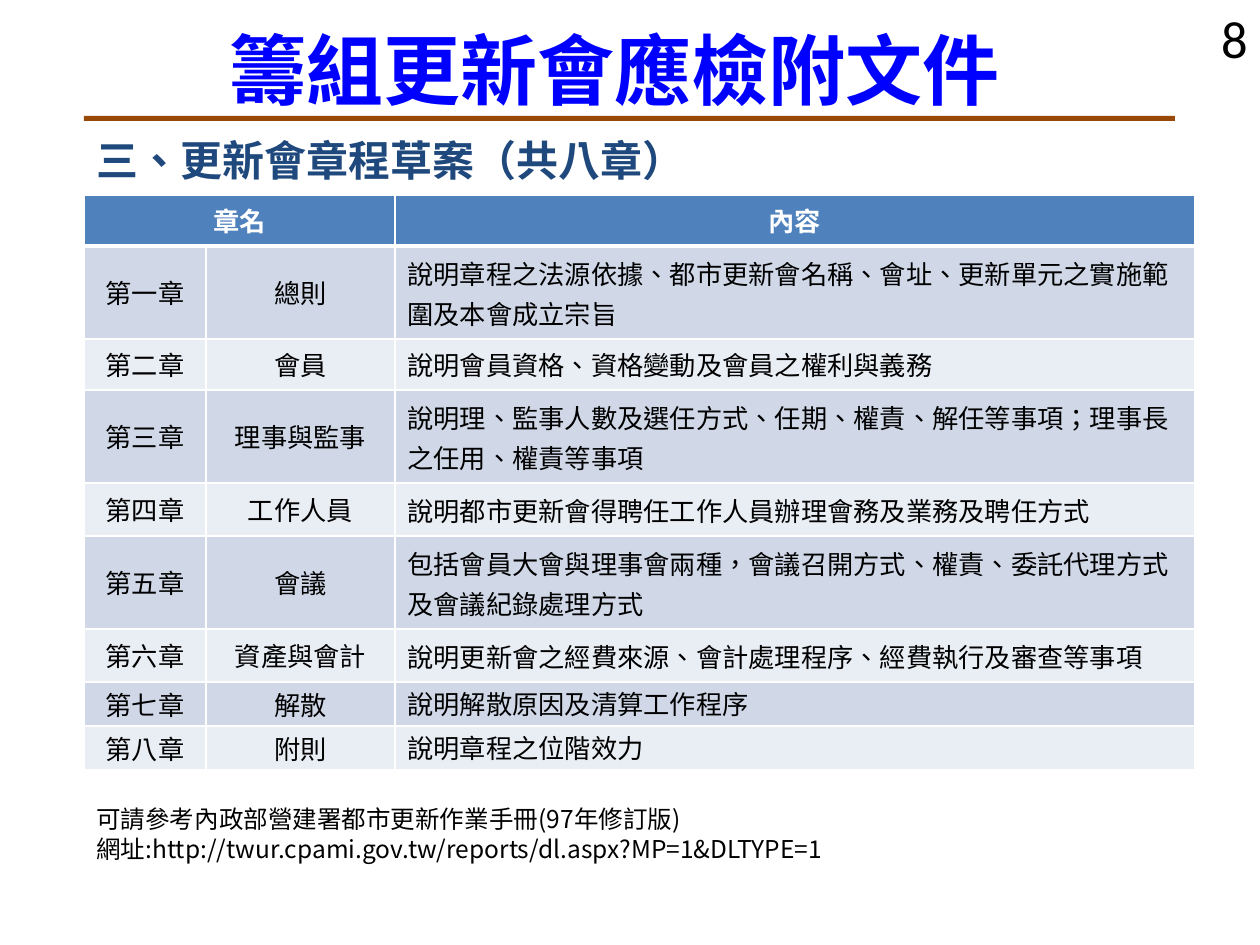
from lxml import etree
from pptx import Presentation
from pptx.dml.color import RGBColor
from pptx.enum.shapes import MSO_SHAPE
from pptx.enum.text import MSO_ANCHOR, PP_ALIGN
from pptx.oxml.ns import qn
from pptx.util import Pt

PX = 914400 // 126
LEFT, CENTER, RIGHT = PP_ALIGN.LEFT, PP_ALIGN.CENTER, PP_ALIGN.RIGHT
TOP, MIDDLE = MSO_ANCHOR.TOP, MSO_ANCHOR.MIDDLE
RECT = MSO_SHAPE.RECTANGLE
CJK = "Noto Sans CJK SC"
COLORS = {
    "title": "0000FF", "rule": "984807", "heading": "1F497D",
    "text": "000000", "white": "FFFFFF",
    "header": "4F81BD", "odd": "D0D8E8", "even": "E9EDF4",
}
COL_WIDTHS = [122, 189, 800]
HEADER_HEIGHT = 51
# chapter, name, content, row height, exact line spacing in points
CHAPTERS = [
    ("第一章", "總則", "說明章程之法源依據、都市更新會名稱、會址、更新單元之實施範圍及本會成立宗旨", 93, 23),
    ("第二章", "會員", "說明會員資格、資格變動及會員之權利與義務", 51, None),
    ("第三章", "理事與監事", "說明理、監事人數及選任方式、任期、權責、解任等事項；理事長之任用、權責等事項", 93, 23),
    ("第四章", "工作人員", "說明都市更新會得聘任工作人員辦理會務及業務及聘任方式", 53, 23),
    ("第五章", "會議", "包括會員大會與理事會兩種，會議召開方式、權責、委託代理方式及會議紀錄處理方式", 93, 23),
    ("第六章", "資產與會計", "說明更新會之經費來源、會計處理程序、經費執行及審查等事項", 53, 23),
    ("第七章", "解散", "說明解散原因及清算工作程序", 44, None),
    ("第八章", "附則", "說明章程之位階效力", 44, None),
]


def rgb(name):
    return RGBColor.from_string(COLORS[name])


def px(*values):
    return [v * PX for v in values]


def write(tf, text, size=15, color="text", bold=False, align=LEFT, font=CJK, spacing=None):
    """Fill a text frame, one paragraph per line; spacing is in points."""
    for i, line in enumerate(text.split("\n")):
        p = tf.paragraphs[0] if i == 0 else tf.add_paragraph()
        p.alignment = align
        if spacing:
            p.line_spacing = Pt(spacing)
        r = p.add_run()
        r.text = line
        r.font.size, r.font.bold, r.font.name = Pt(size), bold, font
        r.font.color.rgb = rgb(color)
        rPr = r.font._element
        rPr.set("lang", "zh-TW")
        ea = etree.Element(qn("a:ea"), typeface=font)
        rPr.find(qn("a:latin")).addnext(ea)


def add_text(s, box, text, **fmt):
    tf = s.shapes.add_textbox(*px(*box)).text_frame
    tf.word_wrap = True
    write(tf, text, **fmt)


def add_title(s, box, text):
    title = s.shapes.title
    title.left, title.top, title.width, title.height = px(*box)
    tf = title.text_frame
    tf.word_wrap = False
    tf.vertical_anchor = MIDDLE
    write(tf, text, size=44, color="title", bold=True, align=CENTER)


def add_rule(s, box):
    sp = s.shapes.add_shape(RECT, *px(*box))
    sp.shadow.inherit = False
    sp.fill.solid()
    sp.fill.fore_color.rgb = rgb("rule")
    sp.line.fill.background()


def set_borders(cell, top=1, bottom=1):
    """White borders; the line elements must precede the cell fill."""
    tcPr = cell._tc.get_or_add_tcPr()
    for i, (tag, width) in enumerate([("lnL", 1), ("lnR", 1), ("lnT", top), ("lnB", bottom)]):
        ln = etree.Element(qn(f"a:{tag}"), w=str(Pt(width)))
        fill = etree.SubElement(ln, qn("a:solidFill"))
        etree.SubElement(fill, qn("a:srgbClr"), val=COLORS["white"])
        tcPr.insert(i, ln)


def format_cell(cell, text, fill, anchor=TOP, top=1, bottom=1, margin=6, **fmt):
    cell.fill.solid()
    cell.fill.fore_color.rgb = rgb(fill)
    cell.vertical_anchor = anchor
    cell.margin_top = cell.margin_bottom = margin * PX
    set_borders(cell, top, bottom)
    if text:
        write(cell.text_frame, text, **fmt)


def add_chapter_table(s, left, top):
    heights = [HEADER_HEIGHT] + [row[3] for row in CHAPTERS]
    frame = s.shapes.add_table(len(heights), len(COL_WIDTHS),
                               *px(left, top, sum(COL_WIDTHS), sum(heights)))
    table = frame.table
    for column, width in zip(table.columns, COL_WIDTHS):
        column.width = width * PX
    for row, height in zip(table.rows, heights):
        row.height = height * PX

    for c, text in enumerate(["章名", "", "內容"]):
        format_cell(table.cell(0, c), text, "header", bottom=3,
                    color="white", bold=True, align=CENTER)
    table.cell(0, 0).merge(table.cell(0, 1))

    for i, (chapter, name, content, height, spacing) in enumerate(CHAPTERS, 1):
        style = dict(fill="odd" if i % 2 else "even", top=3 if i == 1 else 1,
                     margin=2 if height < 50 else 6)
        for c, text in enumerate([chapter, name]):
            format_cell(table.cell(i, c), text, anchor=MIDDLE, align=CENTER, **style)
        format_cell(table.cell(i, 2), content, spacing=spacing, **style)


def main():
    prs = Presentation()
    prs.slide_width, prs.slide_height = px(1260, 945)
    s = prs.slides.add_slide(prs.slide_layouts[5])
    add_text(s, (966, 0, 294, 50), "8", size=30, align=RIGHT, font="Calibri")
    add_rule(s, (84, 116, 1091, 5))
    add_title(s, (213, 16, 803, 106), "籌組更新會應檢附文件")
    add_text(s, (84, 135, 1091, 57), "三、更新會章程草案（共八章）",
             size=24, color="heading", bold=True, spacing=25)
    add_chapter_table(s, 84, 195)
    add_text(s, (84, 798, 883, 72),
             "可請參考內政部營建署都市更新作業手冊(97年修訂版)\n"
             "網址:http://twur.cpami.gov.tw/reports/dl.aspx?MP=1&DLTYPE=1",
             size=14, spacing=17)
    prs.save("out.pptx")


if __name__ == "__main__":
    main()
